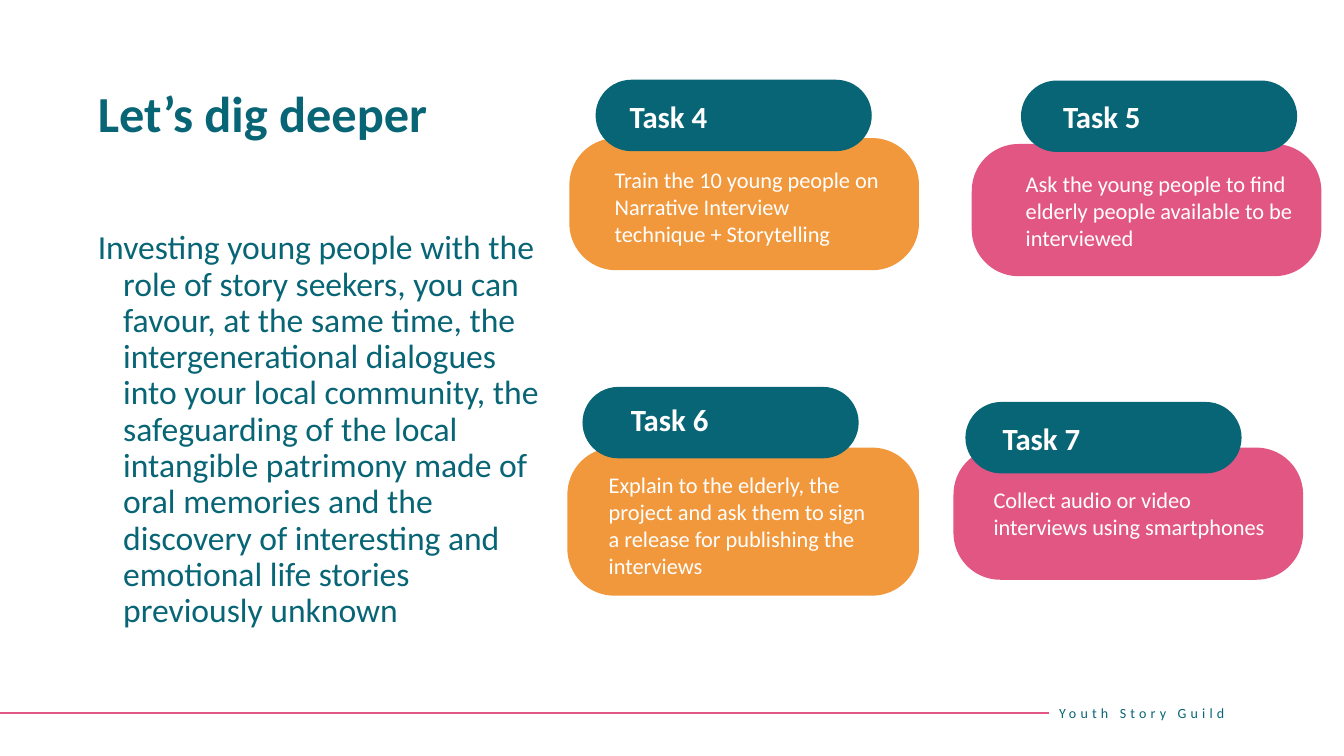
from dataclasses import dataclass

from lxml.etree import SubElement
from pptx import Presentation
from pptx.dml.color import RGBColor
from pptx.enum.shapes import MSO_CONNECTOR, MSO_SHAPE
from pptx.enum.text import MSO_ANCHOR, MSO_AUTO_SIZE, PP_ALIGN
from pptx.oxml.ns import qn
from pptx.util import Cm, Pt


@dataclass(frozen=True)
class Theme:
    font: str = "Calibri"
    teal: str = "086575"
    orange: str = "F1983D"
    pink: str = "E25684"
    white: str = "FFFFFF"
    title: int = 36
    body: int = 24
    label: int = 22
    card: int = 16
    footer: int = 10


THEME = Theme()


@dataclass(frozen=True)
class Task:
    """Places are (left, top) in cm."""
    name: str
    detail: str
    color: str
    card_at: tuple
    pill_at: tuple
    name_at: tuple
    detail_at: tuple
    card_size: tuple = (8.81, 3.33)
    detail_width: float = 7.24


PILL_SIZE = (6.96, 1.8)
CARD_RADIUS = 1.18

TASKS = [
    Task("Task 4",
         "Train the 10 young people on Narrative Interview technique + Storytelling",
         THEME.orange, (14.35, 3.48), (15.01, 2.01), (15.62, 2.34), (15.24, 4.06)),
    Task("Task 5",
         "Ask the young people to find elderly people available to be interviewed",
         THEME.pink, (24.49, 3.63), (25.73, 2.03), (26.54, 2.34), (25.6, 4.17)),
    Task("Task 6",
         "Explain to the elderly, the project and ask them to sign a release "
         "for publishing the interviews",
         THEME.orange, (14.3, 11.28), (14.68, 9.75), (15.65, 9.98), (15.09, 11.76),
         card_size=(8.86, 3.73)),
    Task("Task 7",
         "Collect audio or video interviews using smartphones",
         THEME.pink, (24.03, 11.28), (24.33, 10.13), (25.02, 10.44), (24.79, 12.12),
         detail_width=7.54),
]

BODY = ("Investing young people with the role of story seekers, you can favour, "
        "at the same time, the intergenerational dialogues into your local community, "
        "the safeguarding of the local intangible patrimony made of oral memories and "
        "the discovery of interesting and emotional life stories previously unknown")


def add_run(p, text, size, color, bold=False):
    r = p.add_run()
    r.text = text
    r.font.name = THEME.font
    r.font.size = Pt(size)
    r.font.bold = bold
    r.font.color.rgb = RGBColor.from_string(color)
    return r


def add_text(slide, at, size, text, pt, color, bold=False):
    sp = slide.shapes.add_textbox(*map(Cm, at + size))
    tf = sp.text_frame
    tf.word_wrap = True
    r = add_run(tf.paragraphs[0], text, pt, color, bold)
    return tf, r


def add_rounded(slide, at, size, radius, color):
    sp = slide.shapes.add_shape(MSO_SHAPE.ROUNDED_RECTANGLE, *map(Cm, at + size))
    sp.adjustments[0] = radius / min(size)
    sp.shadow.inherit = False
    sp.fill.solid()
    sp.fill.fore_color.rgb = RGBColor.from_string(color)
    sp.line.fill.background()


def add_task(slide, task):
    add_rounded(slide, task.card_at, task.card_size, CARD_RADIUS, task.color)
    add_rounded(slide, task.pill_at, PILL_SIZE, PILL_SIZE[1] / 2, THEME.teal)
    add_text(slide, task.name_at, (5.64, 1.19), task.name,
             THEME.label, THEME.white, bold=True)
    add_text(slide, task.detail_at, (task.detail_width, 2.31), task.detail,
             THEME.card, THEME.white)


def fill_placeholder(sp, at, size, text, pt, bold=False, hanging=0):
    """Move a placeholder and give it one unbulleted paragraph."""
    sp.left, sp.top, sp.width, sp.height = map(Cm, at + size)
    tf = sp.text_frame
    tf.word_wrap = True
    tf.auto_size = MSO_AUTO_SIZE.NONE
    tf.vertical_anchor = MSO_ANCHOR.TOP
    p = tf.paragraphs[0]
    p.alignment = PP_ALIGN.LEFT
    p.line_spacing = 0.9
    p.space_before = Pt(0)
    pPr = p._p.get_or_add_pPr()
    pPr.set("marL", str(Cm(hanging)))
    pPr.set("indent", str(-Cm(hanging)))
    SubElement(pPr, qn("a:buNone"))
    add_run(p, text, pt, THEME.teal, bold)


def add_footer(slide):
    line = slide.shapes.add_connector(
        MSO_CONNECTOR.STRAIGHT, Cm(0), Cm(17.96), Cm(26.44), Cm(17.96))
    line.line.color.rgb = RGBColor.from_string(THEME.pink)
    line.line.width = Pt(1.5)
    SubElement(line._element.spPr, qn("a:effectLst"))
    tf, r = add_text(slide, (26.44, 17.45), (6.93, 1.02), "Youth Story Guild",
                     THEME.footer, THEME.teal)
    tf.vertical_anchor = MSO_ANCHOR.MIDDLE
    r.font._element.set("spc", "300")


def main():
    prs = Presentation()
    prs.slide_width, prs.slide_height = Cm(33.87), Cm(19.05)
    slide = prs.slides.add_slide(prs.slide_layouts[1])
    title, body = slide.placeholders
    fill_placeholder(title, (2.21, 2.11), (11.68, 2.24), "Let’s dig deeper",
                     THEME.title, bold=True)
    fill_placeholder(body, (2.21, 5.69), (11.68, 10.69), BODY,
                     THEME.body, hanging=0.64)
    add_footer(slide)
    for task in TASKS:
        add_task(slide, task)
    prs.save("out.pptx")


if __name__ == "__main__":
    main()
